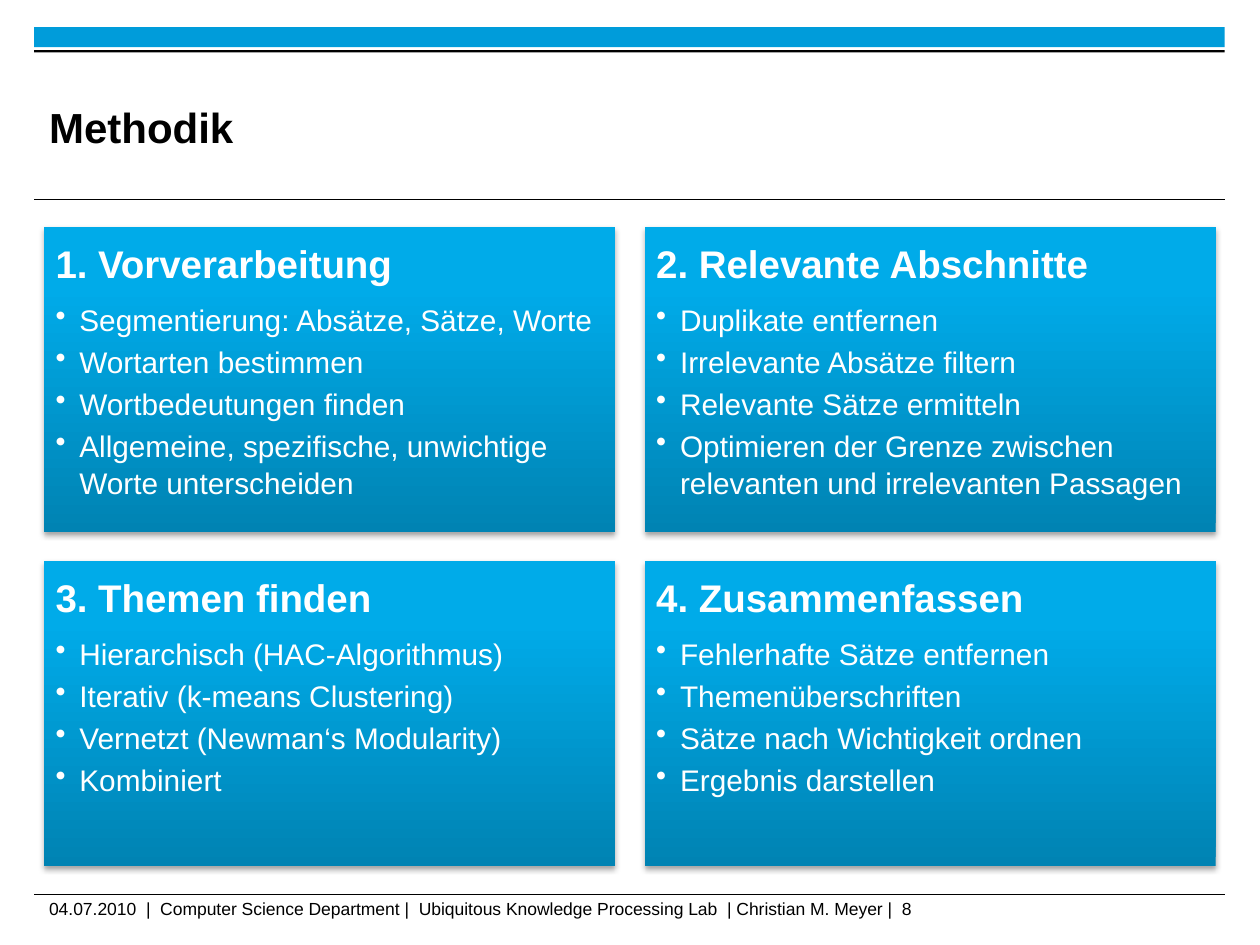
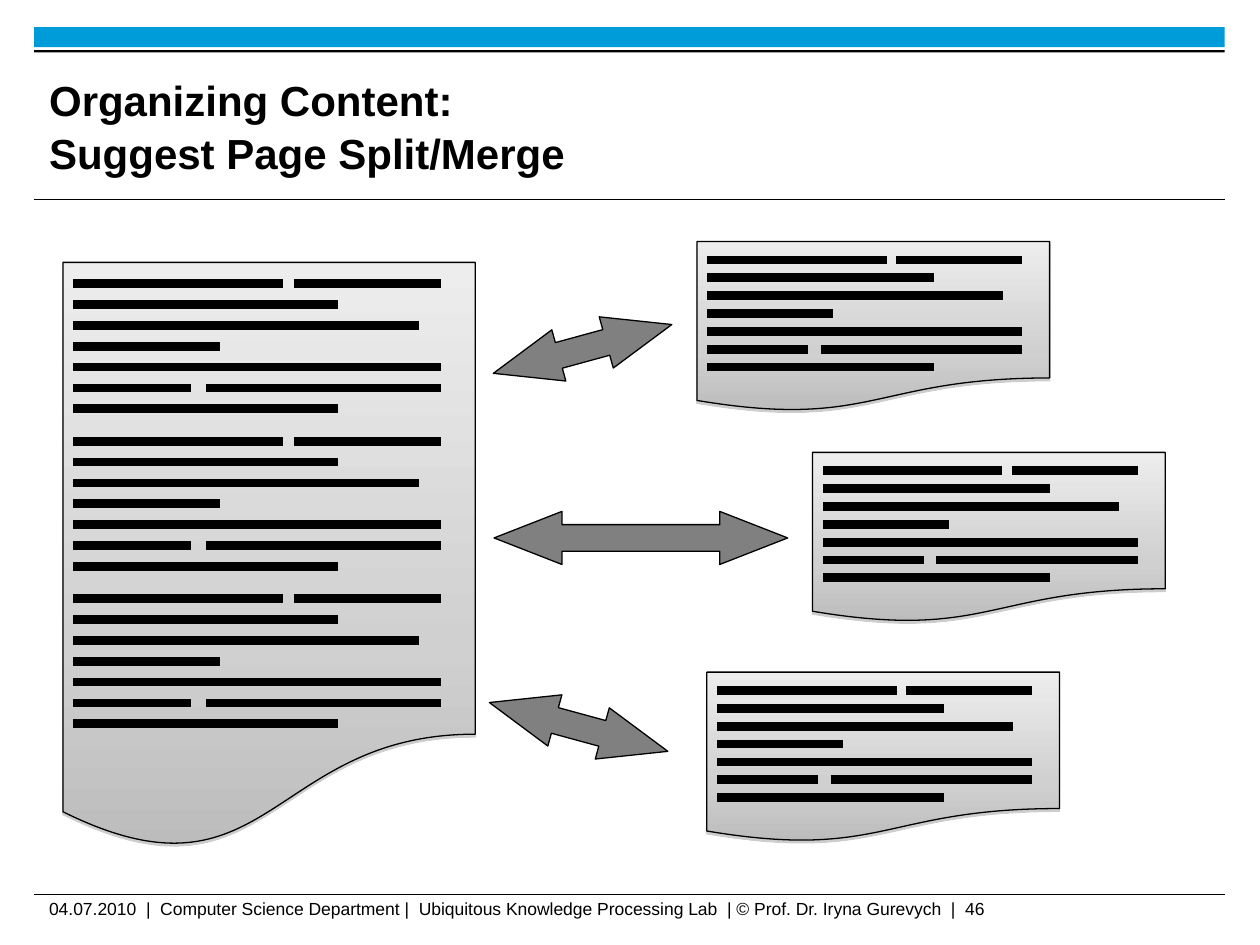
from dataclasses import dataclass
from typing import NamedTuple

from lxml.etree import SubElement as Sub
from pptx import Presentation as Deck
from pptx.dml.color import RGBColor as Rgb
from pptx.enum.shapes import MSO_CONNECTOR as Link, MSO_SHAPE as Form
from pptx.enum.text import MSO_ANCHOR as Anchor, MSO_AUTO_SIZE as Fit, PP_ALIGN as Align
from pptx.oxml.ns import qn
from pptx.shapes.autoshape import Shape
from pptx.shapes.connector import Connector as Wire
from pptx.shapes.shapetree import GroupShapes as Group
from pptx.slide import Slide
from pptx.text.text import TextFrame as Frame, _Paragraph as Para
from pptx.util import Cm, Pt


class Box(NamedTuple):
    left: float
    top: float
    width: float
    height: float

    def cm(self) -> list[Cm]:
        return [Cm(side) for side in self]


class Blend(NamedTuple):
    stops: tuple[tuple[int, str], ...]
    angle: int


class Shade(NamedTuple):
    color: str
    alpha: int
    blur: float
    dist: float


@dataclass(frozen=True)
class Theme:
    font: str = "Arial"
    black: str = "000000"
    white: str = "FFFFFF"
    band: str = "009CDA"
    arrow: str = "808080"
    title: float = 24
    head: float = 22
    item: float = 17
    foot: float = 10
    lead: float = 1.05
    rule: float = 0.6
    edge: float = 0.75
    stroke: float = 5
    card: Blend = Blend(((0, "0083B3"), (80, "00ABE9"), (100, "00ABEA")), 90)
    paper: Blend = Blend(((0, "EDEDED"), (65, "D0D0D0"), (100, "BCBCBC")), 270)
    glow: Shade = Shade("000000", 35, 3.1, 1.8)
    cast: Shade = Shade("808080", 38, 0, 1.6)


@dataclass(frozen=True)
class Card:
    head: str
    items: tuple[str, ...]


@dataclass(frozen=True)
class Page:
    box: Box
    inset: float
    pitch: float
    span: float
    blocks: int = 1


@dataclass(frozen=True)
class Arrow:
    box: Box
    turn: float = 0


LOOK = Theme()
FOOT = "04.07.2010  |  Computer Science Department |  Ubiquitous Knowledge Processing Lab  | "
LEFT, WIDTH = 0.69, 24
GRID = Box(0.89, 4.57, 11.51, 6.15)
STEP_X, STEP_Y = 12.11, 6.73
MARGIN, INDENT = 0.23, 0.48
BLOCK = 3.175

CARDS = (
    Card("1. Vorverarbeitung", (
        "Segmentierung: Absätze, Sätze, Worte",
        "Wortarten bestimmen",
        "Wortbedeutungen finden",
        "Allgemeine, spezifische, unwichtige Worte unterscheiden",
    )),
    Card("2. Relevante Abschnitte", (
        "Duplikate entfernen",
        "Irrelevante Absätze filtern",
        "Relevante Sätze ermitteln",
        "Optimieren der Grenze zwischen relevanten und irrelevanten Passagen",
    )),
    Card("3. Themen finden", (
        "Hierarchisch (HAC-Algorithmus)",
        "Iterativ (k-means Clustering)",
        "Vernetzt (Newman‘s Modularity)",
        "Kombiniert",
    )),
    Card("4. Zusammenfassen", (
        "Fehlerhafte Sätze entfernen",
        "Themenüberschriften",
        "Sätze nach Wichtigkeit ordnen",
        "Ergebnis darstellen",
    )),
)

ROWS = (
    ((0, 0.57), (0.6, 1)),
    ((0, 0.72),),
    ((0, 0.94),),
    ((0, 0.4),),
    ((0, 1),),
    ((0, 0.32), (0.36, 1)),
    ((0, 0.72),),
)
PAGES = (
    Page(Box(1.27, 5.29, 8.31, 11.86), 0.43, 0.42, 7.41, blocks=3),
    *(Page(Box(left, top, 7.11, 3.43), 0.37, 0.36, 6.35)
      for left, top in ((14.05, 4.87), (16.38, 9.12), (14.25, 13.55))),
)
ARROWS = (
    Arrow(Box(9.96, 10.31, 5.92, 1.07)),
    Arrow(Box(9.8, 14.12, 3.73, 1.07), 15.3),
    Arrow(Box(9.88, 6.5, 3.73, 1.07), -15.3),
)


def style(para: Para, size: float, color: str, bold: bool = False) -> None:
    para.alignment = Align.LEFT
    para.line_spacing = LOOK.lead
    for run in para.runs:
        run.font.name = LOOK.font
        run.font.size = Pt(size)
        run.font.bold = bold
        run.font.color.rgb = Rgb.from_string(color)


def pad(frame: Frame, gap: float, anchor: Anchor) -> None:
    frame.margin_left = frame.margin_right = Cm(gap)
    frame.margin_top = frame.margin_bottom = Cm(gap)
    frame.vertical_anchor = anchor
    frame.word_wrap = True
    frame.auto_size = Fit.NONE


def plain(shapes: Group, form: Form, box: Box) -> Shape:
    shape = shapes.add_shape(form, *box.cm())
    shape.shadow.inherit = False
    shape.line.fill.background()
    return shape


def paint(shape: Shape, color: str) -> None:
    shape.fill.solid()
    shape.fill.fore_color.rgb = Rgb.from_string(color)


def border(shape: Shape | Wire, width: float) -> None:
    shape.line.color.rgb = Rgb.from_string(LOOK.black)
    shape.line.width = Pt(width)


def blend(shape: Shape, tone: Blend) -> None:
    shape.fill.gradient()
    shape.fill.gradient_angle = tone.angle
    stops = shape.element.spPr.find(".//" + qn("a:gsLst"))
    stops.clear()
    for place, color in tone.stops:
        stop = Sub(stops, qn("a:gs"), pos=str(place * 1000))
        Sub(stop, qn("a:srgbClr"), val=color)


def shade(shape: Shape, tone: Shade) -> None:
    glow = Sub(shape.element.spPr.find(qn("a:effectLst")), qn("a:outerShdw"),
               blurRad=str(Pt(tone.blur)), dist=str(Pt(tone.dist)),
               dir="5400000", algn="t", rotWithShape="0")
    color = Sub(glow, qn("a:srgbClr"), val=tone.color)
    Sub(color, qn("a:alpha"), val=str(tone.alpha * 1000))


def stroke(shapes: Group, left: float, right: float, top: float, width: float) -> None:
    line = shapes.add_connector(Link.STRAIGHT, Cm(left), Cm(top), Cm(right), Cm(top))
    border(line, width)
    Sub(line.element.spPr, qn("a:effectLst"))


def start(deck: Deck, title: str, foot: str) -> Slide:
    slide = deck.slides.add_slide(deck.slide_layouts[5])
    for top, height, color in ((0.55, 0.4, LOOK.band), (1.01, 0.05, LOOK.black)):
        paint(plain(slide.shapes, Form.RECTANGLE, Box(LEFT, top, WIDTH, height)), color)
    for top in (4.02, 18.03):
        stroke(slide.shapes, LEFT, LEFT + WIDTH, top, LOOK.rule)
    head = slide.shapes.title
    head.left, head.top, head.width, head.height = Box(0.99, 1.35, 19.1, 2.34).cm()
    head.text_frame.text = title
    pad(head.text_frame, 0, Anchor.MIDDLE)
    style(head.text_frame.paragraphs[0], LOOK.title, LOOK.black, True)
    note = slide.shapes.add_textbox(*Box(0.99, 18.08, 22.1, 0.64).cm()).text_frame
    note.text = FOOT + foot
    pad(note, 0, Anchor.TOP)
    style(note.paragraphs[0], LOOK.foot, LOOK.black)
    return slide


def bullet(para: Para) -> None:
    para.level = 1
    props = para._p.get_or_add_pPr()
    props.set("marL", str(Cm(INDENT)))
    props.set("indent", str(-Cm(INDENT)))
    Sub(props, qn("a:buChar"), char="•")


def draw_card(slide: Slide, card: Card, box: Box) -> None:
    shape = plain(slide.shapes, Form.RECTANGLE, box)
    blend(shape, LOOK.card)
    shade(shape, LOOK.glow)
    frame = shape.text_frame
    pad(frame, MARGIN, Anchor.TOP)
    frame.text = card.head
    head = frame.paragraphs[0]
    style(head, LOOK.head, LOOK.white, True)
    head.space_after = Pt(0.35 * LOOK.head)
    for item in card.items:
        para = frame.add_paragraph()
        para.text = item
        bullet(para)
        style(para, LOOK.item, LOOK.white)
        para.space_after = Pt(0.15 * LOOK.item)


def draw_page(slide: Slide, page: Page) -> None:
    shapes = slide.shapes.add_group_shape().shapes
    sheet = plain(shapes, Form.FLOWCHART_DOCUMENT, page.box)
    blend(sheet, LOOK.paper)
    border(sheet, LOOK.edge)
    shade(sheet, LOOK.cast)
    left = page.box.left + 0.21
    for block in range(page.blocks):
        for row, parts in enumerate(ROWS):
            top = page.box.top + page.inset + block * BLOCK + row * page.pitch
            for head, tail in parts:
                stroke(shapes, left + head * page.span, left + tail * page.span,
                       top, LOOK.stroke)


def draw_arrow(slide: Slide, arrow: Arrow) -> None:
    shape = plain(slide.shapes, Form.LEFT_RIGHT_ARROW, arrow.box)
    shape.adjustments[0] = 0.5
    shape.adjustments[1] = 1.28
    shape.rotation = arrow.turn
    paint(shape, LOOK.arrow)
    border(shape, LOOK.edge)


def main() -> None:
    deck = Deck()
    deck.slide_width, deck.slide_height = Cm(25.4), Cm(19.05)
    steps = start(deck, "Methodik", "Christian M. Meyer |  8")
    for index, card in enumerate(CARDS):
        row, col = divmod(index, 2)
        draw_card(steps, card, GRID._replace(left=GRID.left + col * STEP_X,
                                             top=GRID.top + row * STEP_Y))
    split = start(deck, "Organizing Content:\vSuggest Page Split/Merge",
                  "© Prof. Dr. Iryna Gurevych  |  46")
    for page in PAGES:
        draw_page(split, page)
    for arrow in ARROWS:
        draw_arrow(split, arrow)
    deck.save("out.pptx")


if __name__ == "__main__":
    main()
